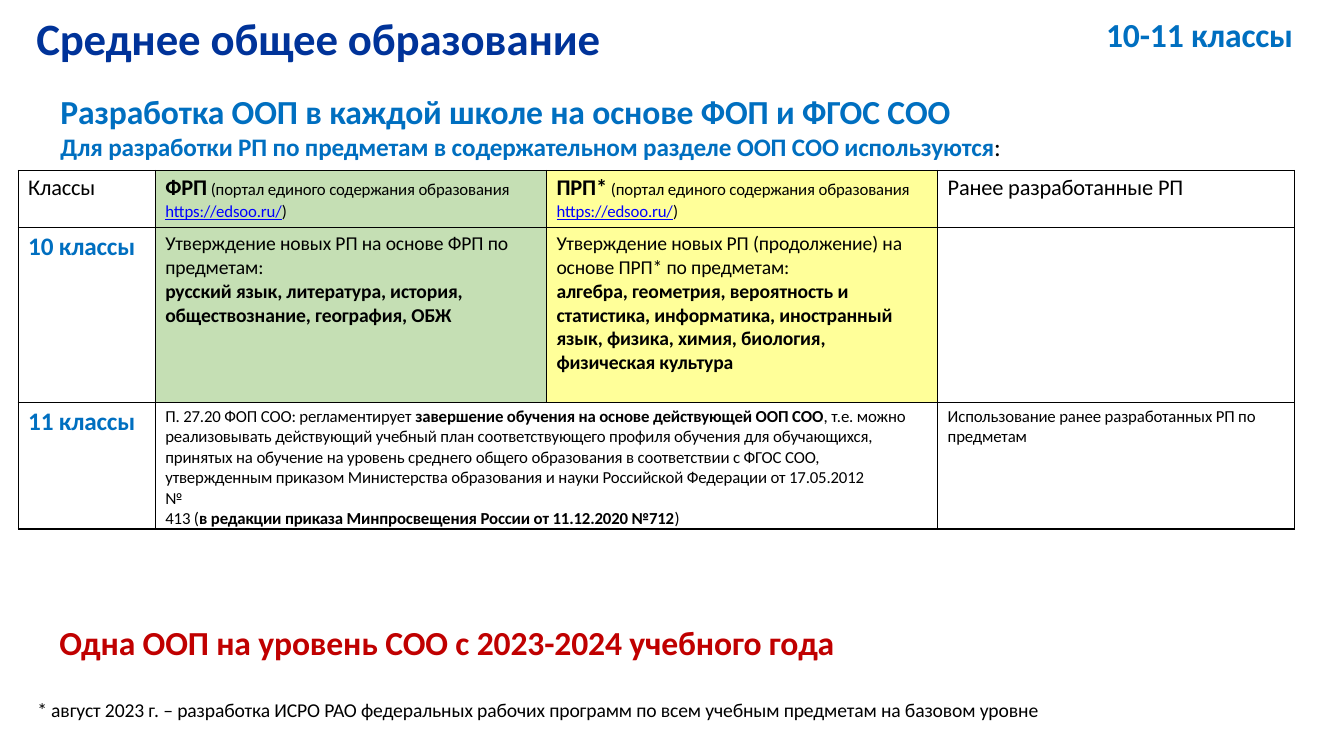
from dataclasses import dataclass

from lxml import etree
from pptx import Presentation
from pptx.dml.color import RGBColor
from pptx.enum.text import MSO_ANCHOR, MSO_AUTO_SIZE, PP_ALIGN
from pptx.oxml.ns import qn
from pptx.util import Inches, Pt

LEFT = PP_ALIGN.LEFT
TOP = MSO_ANCHOR.TOP
NO_AUTO_SIZE = MSO_AUTO_SIZE.NONE
TITLE_ONLY_LAYOUT = 5
FONT = "Calibri"
LETTER_SPACING = "-10"
BLACK, NAVY, BLUE, RED, LINK = "000000", "003399", "006FC0", "C00000", "0000FF"
GREEN_FILL, YELLOW_FILL = "C5DFB4", "FFFF99"
TABLE_LEFT, TABLE_TOP = 0.18, 1.69
COLUMN_WIDTHS = (1.36, 3.88, 3.88, 3.54)
ROW_HEIGHTS = (0.57, 1.73, 1.23)


@dataclass(frozen=True)
class Span:
    """A stretch of text in one format."""
    text: str
    size: float
    color: str = BLACK
    bold: bool = False
    underline: bool = False


Line = tuple[Span, ...]


@dataclass(frozen=True)
class Label:
    """A text block outside the table."""
    left: float
    top: float
    width: float
    height: float
    lines: tuple[Line, ...]


@dataclass(frozen=True)
class TableCell:
    """The content and look of one table cell."""
    row: int
    column: int
    lines: tuple[Line, ...]
    fill: str = ""
    right_margin: float = 0


def portal_lines(name: str) -> tuple[Line, ...]:
    """Return the heading of a column that refers to the portal."""
    return (
        (Span(name, 16, bold=True), Span(" (портал единого содержания образования", 12)),
        (Span("https://edsoo.ru/", 12, LINK, underline=True), Span(")", 12)),
    )


TITLE = Label(0.36, 0.1, 8.01, 0.56, ((Span("Среднее общее образование", 32, NAVY, True),),))
LABELS = (
    Label(0.6, 0.89, 11.22, 0.72, (
        (Span("Разработка ООП в каждой школе на основе ФОП и ФГОС СОО", 24, BLUE, True),),
        (Span("Для разработки РП по предметам в содержательном разделе ООП СОО используются",
              18, BLUE, True), Span(":", 18)),
    )),
    Label(10.97, 0.13, 1.89, 0.43, ((Span("10-11 классы", 24, BLUE, True),),)),
    Label(0.37, 6.91, 10.11, 0.26, ((Span(
        "* август 2023 г. – разработка ИСРО РАО федеральных рабочих программ "
        "по всем учебным предметам на базовом уровне", 14),),)),
    Label(0.59, 6.16, 9.66, 0.43, (
        (Span("Одна ООП на уровень СОО с 2023-2024 учебного года", 24, RED, True),),)),
)
CELLS = (
    TableCell(0, 0, ((Span("Классы", 16),),)),
    TableCell(0, 1, portal_lines("ФРП"), GREEN_FILL),
    TableCell(0, 2, portal_lines("ПРП*"), YELLOW_FILL),
    TableCell(0, 3, ((Span("Ранее разработанные РП", 16),),)),
    TableCell(1, 0, ((Span("10 классы", 18, BLUE, True),),)),
    TableCell(1, 1, (
        (Span("Утверждение новых РП на основе ФРП по предметам:", 14),),
        (Span("русский язык, литература, история,", 14, bold=True),),
        (Span("обществознание, география, ОБЖ", 14, bold=True),),
    ), GREEN_FILL, 0.25),
    TableCell(1, 2, (
        (Span("Утверждение новых РП (продолжение) на основе ПРП* по предметам:", 14),),
        (Span("алгебра, геометрия, вероятность и", 14, bold=True),),
        (Span("статистика, информатика, иностранный язык, физика, химия, биология, "
              "физическая культура", 14, bold=True),),
    ), YELLOW_FILL, 0.25),
    TableCell(1, 3, ()),
    TableCell(2, 0, ((Span("11 классы", 18, BLUE, True),),)),
    TableCell(2, 1, (
        (Span("П. 27.20 ФОП СОО: регламентирует ", 12),
         Span("завершение обучения на основе действующей ООП СОО", 12, bold=True),
         Span(", т.е. можно", 12)),
        (Span("реализовывать действующий учебный план соответствующего профиля обучения "
              "для обучающихся, принятых на обучение на уровень среднего общего "
              "образования в соответствии с ФГОС СОО,", 12),),
        (Span("утвержденным приказом Министерства образования и науки "
              "Российской Федерации от 17.05.2012", 12),),
        (Span("№", 12),),
        (Span("413 (", 12),
         Span("в редакции приказа Минпросвещения России от 11.12.2020 №712", 12, bold=True),
         Span(")", 12)),
    )),
    TableCell(2, 2, ()),
    TableCell(2, 3, (
        (Span("Использование ранее разработанных РП по", 12),),
        (Span("предметам", 12),),
    )),
)


def rgb(color: str) -> RGBColor:
    """Convert a hex string to a colour."""
    return RGBColor.from_string(color)


def write_lines(text_frame, lines: tuple[Line, ...], space_before: float = 0) -> None:
    """Write formatted paragraphs into a text frame."""
    for index, line in enumerate(lines):
        paragraph = text_frame.add_paragraph() if index else text_frame.paragraphs[0]
        paragraph.alignment = LEFT
        paragraph.line_spacing = 1.0
        paragraph.space_before = Pt(0 if index else space_before)
        for span in line:
            run = paragraph.add_run()
            run.text = span.text
            run.font.name = FONT
            run.font.size = Pt(span.size)
            run.font.bold = span.bold
            run.font.underline = span.underline
            run.font.color.rgb = rgb(span.color)
            run.font._element.set("spc", LETTER_SPACING)


def format_label(shape, label: Label) -> None:
    """Place a text shape and fill it with its lines."""
    shape.left, shape.top = Inches(label.left), Inches(label.top)
    shape.width, shape.height = Inches(label.width), Inches(label.height)
    text_frame = shape.text_frame
    text_frame.word_wrap = True
    text_frame.auto_size = NO_AUTO_SIZE
    text_frame.vertical_anchor = TOP
    text_frame.margin_left = text_frame.margin_right = text_frame.margin_bottom = 0
    text_frame.margin_top = Inches(0.01)
    write_lines(text_frame, label.lines, 1)


def add_borders(cell) -> None:
    """Draw a thin black line on all sides of a cell."""
    properties = cell._tc.get_or_add_tcPr()
    for side in ("a:lnL", "a:lnR", "a:lnT", "a:lnB"):
        border = etree.SubElement(properties, qn(side), w=str(Pt(1)))
        solid_fill = etree.SubElement(border, qn("a:solidFill"))
        etree.SubElement(solid_fill, qn("a:srgbClr"), val=BLACK)


def format_cell(cell, content: TableCell) -> None:
    """Set the margins, borders, fill and text of a cell."""
    cell.margin_left, cell.margin_right = Inches(0.1), Inches(content.right_margin)
    cell.margin_top, cell.margin_bottom = Inches(0.04), 0
    cell.vertical_anchor = TOP
    add_borders(cell)
    if content.fill:
        cell.fill.solid()
        cell.fill.fore_color.rgb = rgb(content.fill)
    else:
        cell.fill.background()
    write_lines(cell.text_frame, content.lines)


def add_programme_table(slide) -> None:
    """Add the table of work programmes by class."""
    table = slide.shapes.add_table(
        len(ROW_HEIGHTS), len(COLUMN_WIDTHS), Inches(TABLE_LEFT), Inches(TABLE_TOP),
        Inches(sum(COLUMN_WIDTHS)), Inches(sum(ROW_HEIGHTS))).table
    table.first_row = table.horz_banding = False
    for column, width in zip(table.columns, COLUMN_WIDTHS):
        column.width = Inches(width)
    for row, height in zip(table.rows, ROW_HEIGHTS):
        row.height = Inches(height)
    for content in CELLS:
        format_cell(table.cell(content.row, content.column), content)
    table.cell(2, 1).merge(table.cell(2, 2))


def main() -> None:
    """Build the slide and save the presentation."""
    presentation = Presentation()
    presentation.slide_width, presentation.slide_height = Inches(13.33), Inches(7.5)
    slide = presentation.slides.add_slide(presentation.slide_layouts[TITLE_ONLY_LAYOUT])
    format_label(slide.shapes.title, TITLE)
    for label in LABELS:
        format_label(slide.shapes.add_textbox(0, 0, 0, 0), label)
    add_programme_table(slide)
    presentation.save("out.pptx")


if __name__ == "__main__":
    main()
